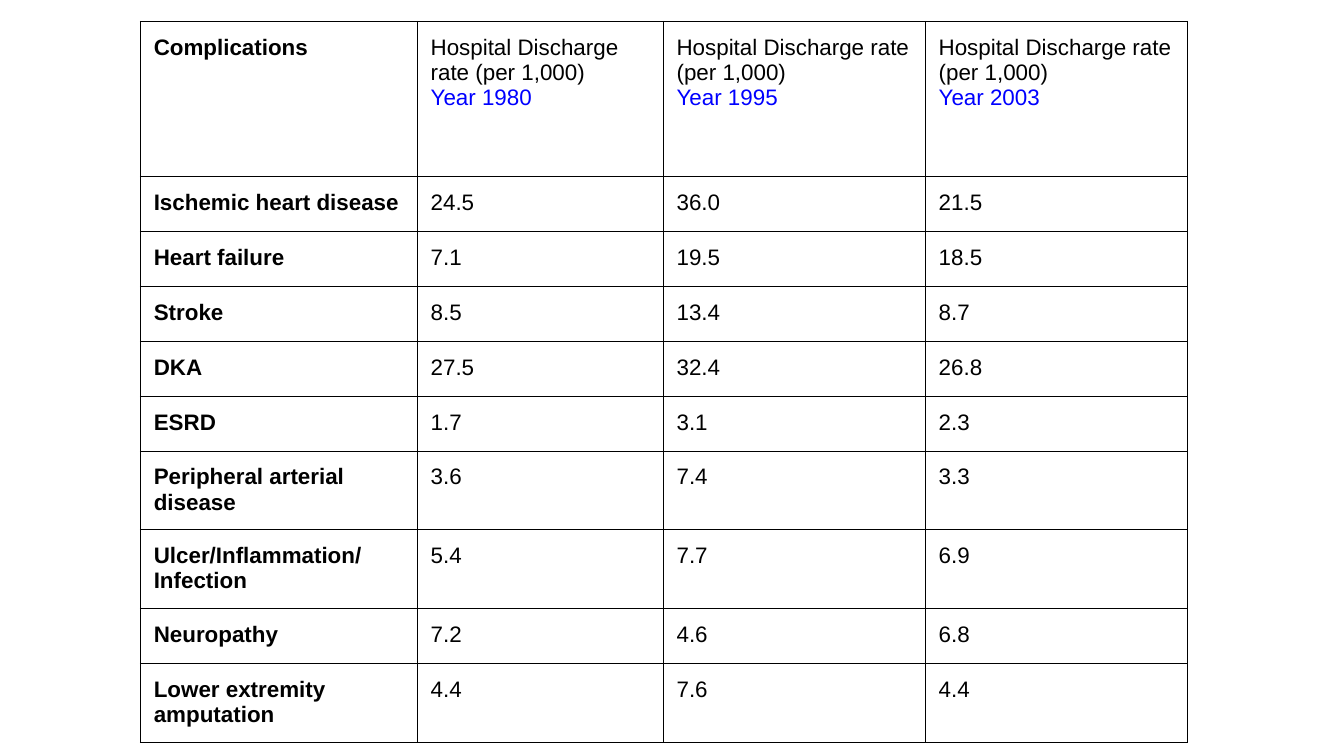
from pptx import Presentation
from pptx import util as u
from pptx.dml.color import RGBColor
from pptx.oxml import parse_xml
from pptx.oxml.ns import nsdecls

BLACK = RGBColor(0x00, 0x00, 0x00)
BLUE = RGBColor(0x00, 0x00, 0xFF)

WIDE = u.Inches(10)
HIGH = WIDE * 9 // 16
LEFT, TOP = u.Pt(75.2), u.Inches(0.16)
COLS = [2.06, 1.83, 1.95, 1.95]
HEAD, ONE, TWO = u.Pt(83.2), u.Pt(29.4), u.Pt(42.2)
PAD = u.Inches(0.1)
SIZE, LINE = u.Pt(12), u.Pt(0.75)

YEARS = [1980, 1995, 2003]
RATES = [
    ("Ischemic heart disease", ONE, "24.5", "36.0", "21.5"),
    ("Heart failure", ONE, "7.1", "19.5", "18.5"),
    ("Stroke", ONE, "8.5", "13.4", "8.7"),
    ("DKA", ONE, "27.5", "32.4", "26.8"),
    ("ESRD", ONE, "1.7", "3.1", "2.3"),
    ("Peripheral arterial disease", TWO, "3.6", "7.4", "3.3"),
    ("Ulcer/Inflammation/Infection", TWO, "5.4", "7.7", "6.9"),
    ("Neuropathy", ONE, "7.2", "4.6", "6.8"),
    ("Lower extremity amputation", TWO, "4.4", "7.6", "4.4"),
]


def add_edges(cell):
    props = cell._tc.get_or_add_tcPr()
    for spot, side in enumerate(("lnL", "lnR", "lnT", "lnB")):
        props.insert(spot, parse_xml(
            f'<a:{side} {nsdecls("a")} w="{LINE}"><a:solidFill>'
            f'<a:srgbClr val="{BLACK}"/></a:solidFill></a:{side}>'))


def fill_cell(cell, words, bold):
    cell.margin_left = cell.margin_right = PAD
    cell.margin_top = cell.margin_bottom = PAD
    cell.fill.background()
    add_edges(cell)
    cell.text_frame.text = words
    for row, para in enumerate(cell.text_frame.paragraphs):
        for run in para.runs:
            font = run.font
            font.name, font.size, font.bold = "Arial", SIZE, bold
            font.color.rgb = BLUE if row else BLACK


def add_grid(slide, rows, highs):
    frame = slide.shapes.add_table(
        len(rows), len(COLS), LEFT, TOP, u.Inches(sum(COLS)), sum(highs))
    table = frame.table
    table.first_row = table.horz_banding = False
    for col, wide in zip(table.columns, COLS):
        col.width = u.Inches(wide)
    for row, high, words in zip(table.rows, highs, rows):
        row.height = high
        for col, (cell, word) in enumerate(zip(row.cells, words)):
            fill_cell(cell, word, col == 0)


def main():
    deck = Presentation()
    deck.slide_width, deck.slide_height = WIDE, HIGH
    slide = deck.slides.add_slide(deck.slide_layouts[6])
    heads = [f"Hospital Discharge rate (per 1,000)\nYear {year}" for year in YEARS]
    rows = [["Complications", *heads]]
    rows += [[name, *rates] for name, _, *rates in RATES]
    add_grid(slide, rows, [HEAD] + [rate[1] for rate in RATES])
    deck.save("out.pptx")


if __name__ == "__main__":
    main()
